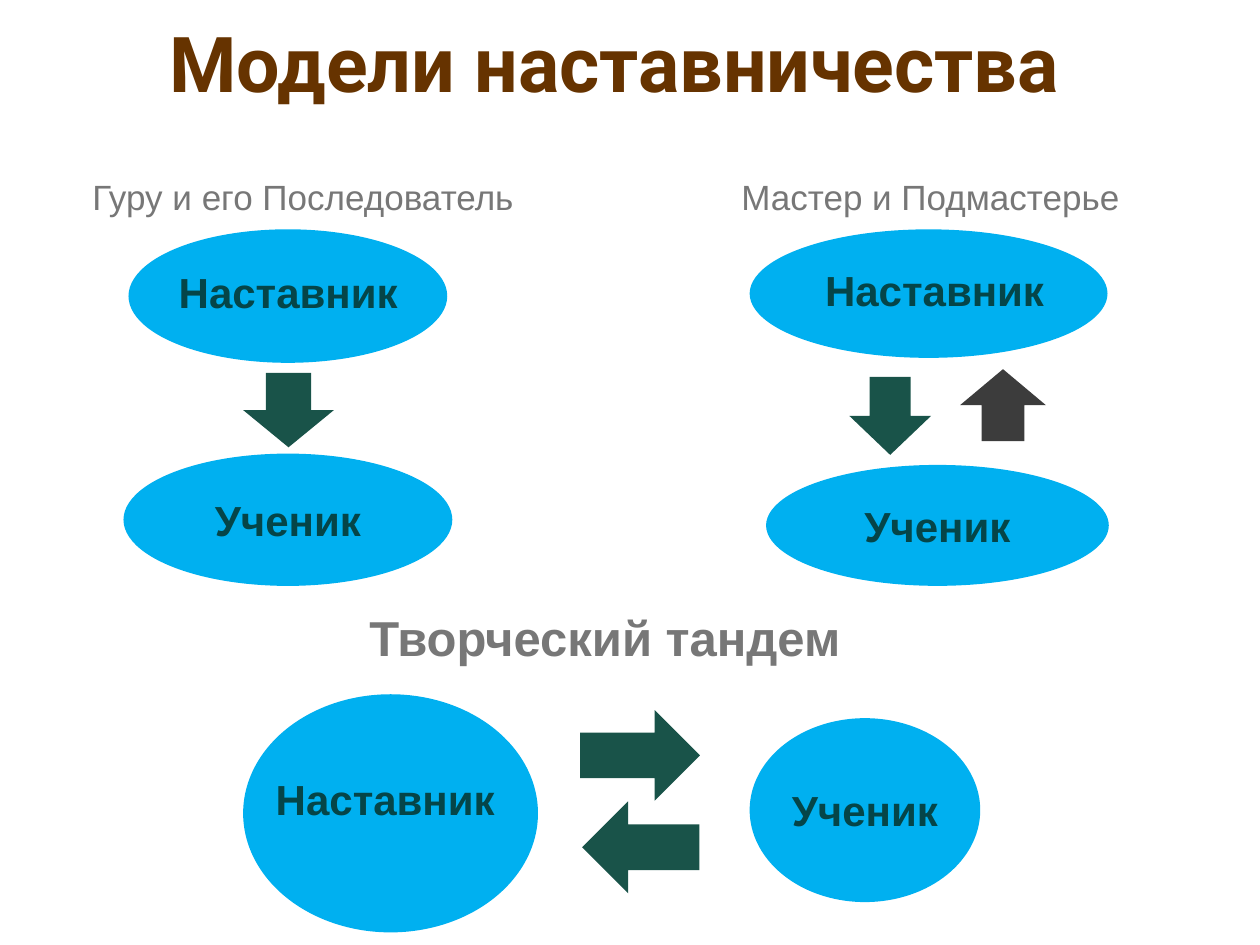
from dataclasses import dataclass

from pptx import Presentation
from pptx.dml.color import RGBColor
from pptx.enum.shapes import MSO_SHAPE as Preset
from pptx.enum.text import MSO_ANCHOR as Anchor, PP_ALIGN as Align
from pptx.util import Inches, Pt

CELL = 0.1  # inches; the slide is a grid of 100 columns by 75 rows


@dataclass(frozen=True)
class Style:
    size: int
    color: str
    bold: bool = False
    font: str = "Arial"


@dataclass(frozen=True)
class Theme:
    ellipse: str = "00B0F0"
    arrow: str = "195349"
    feedback: str = "3C3C3C"
    title: Style = Style(44, "663300", True, "Roboto")
    role: Style = Style(24, "054548", True)
    model: Style = Style(20, "777777")
    tandem: Style = Style(28, "777777", True)


THEME = Theme()


@dataclass(frozen=True)
class Box:
    """A place on the grid, in columns and rows."""
    column: float
    row: float
    columns: float
    rows: float

    def lengths(self):
        return [Inches(cells * CELL)
                for cells in (self.column, self.row, self.columns, self.rows)]


@dataclass(frozen=True)
class Label:
    text: str
    box: Box
    style: Style
    align: Align = Align.CENTER
    anchor: Anchor = Anchor.TOP


@dataclass(frozen=True)
class Arrow:
    box: Box
    rotation: int = 0
    color: str = THEME.arrow


@dataclass(frozen=True)
class Model:
    heading: Label
    mentor: Box
    mentor_text: Box
    learner: Box
    arrows: tuple[Arrow, ...]


TITLE = Label("Модели наставничества", Box(8.8, -0.5, 80, 10.8),
              THEME.title, anchor=Anchor.MIDDLE)

MODELS = (
    Model(Label("Гуру и его Последователь", Box(5.7, 13.4, 36.7, 4.4), THEME.model),
          mentor=Box(10.2, 18.2, 25.3, 10.6),
          mentor_text=Box(13.2, 20.7, 23.3, 5),
          learner=Box(9.8, 36, 26.1, 10.5),
          arrows=(Arrow(Box(19.3, 29.6, 7.2, 5.9)),)),
    Model(Label("Мастер и Подмастерье", Box(55.5, 13.4, 36.7, 4.4), THEME.model),
          mentor=Box(59.5, 18.2, 28.4, 10.2),
          mentor_text=Box(64.5, 20.5, 23.3, 5),
          learner=Box(60.8, 36.9, 27.2, 9.6),
          arrows=(Arrow(Box(67.4, 29.9, 6.5, 6.2)),
                  Arrow(Box(76.2, 29.3, 6.8, 5.7), 180, THEME.feedback))),
    Model(Label("Творческий тандем", Box(28.2, 47.7, 39.6, 5.7), THEME.tandem),
          mentor=Box(19.3, 55.1, 23.4, 18.9),
          mentor_text=Box(20.9, 60.9, 23.3, 5),
          learner=Box(59.5, 57, 18.3, 14.6),
          arrows=(Arrow(Box(47.2, 55.2, 7.2, 9.5), 270),
                  Arrow(Box(47.2, 62.6, 7.3, 9.3), 90))),
)


def write(frame, text: str, style: Style, align: Align, anchor: Anchor):
    frame.vertical_anchor = anchor
    paragraph = frame.paragraphs[0]
    paragraph.alignment = align
    run = paragraph.add_run()
    run.text = text
    run.font.name = style.font
    run.font.size = Pt(style.size)
    run.font.bold = style.bold
    run.font.color.rgb = RGBColor.from_string(style.color)


def add_label(slide, label: Label):
    frame = slide.shapes.add_textbox(*label.box.lengths()).text_frame
    frame.word_wrap = True
    write(frame, label.text, label.style, label.align, label.anchor)


def add_filled(slide, preset: Preset, box: Box, color: str):
    shape = slide.shapes.add_shape(preset, *box.lengths())
    shape.shadow.inherit = False
    shape.fill.solid()
    shape.fill.fore_color.rgb = RGBColor.from_string(color)
    shape.line.fill.background()
    return shape


def add_model(slide, model: Model):
    add_label(slide, model.heading)
    add_filled(slide, Preset.OVAL, model.mentor, THEME.ellipse)
    add_label(slide, Label("Наставник", model.mentor_text, THEME.role, Align.LEFT))
    learner = add_filled(slide, Preset.OVAL, model.learner, THEME.ellipse)
    learner.text_frame.word_wrap = False
    write(learner.text_frame, "Ученик", THEME.role, Align.CENTER, Anchor.MIDDLE)
    for arrow in model.arrows:
        shape = add_filled(slide, Preset.DOWN_ARROW, arrow.box, arrow.color)
        shape.rotation = arrow.rotation


def main():
    presentation = Presentation()
    presentation.slide_width = Inches(100 * CELL)
    presentation.slide_height = Inches(75 * CELL)
    slide = presentation.slides.add_slide(presentation.slide_layouts[6])
    add_label(slide, TITLE)
    for model in MODELS:
        add_model(slide, model)
    presentation.save("out.pptx")


if __name__ == "__main__":
    main()
